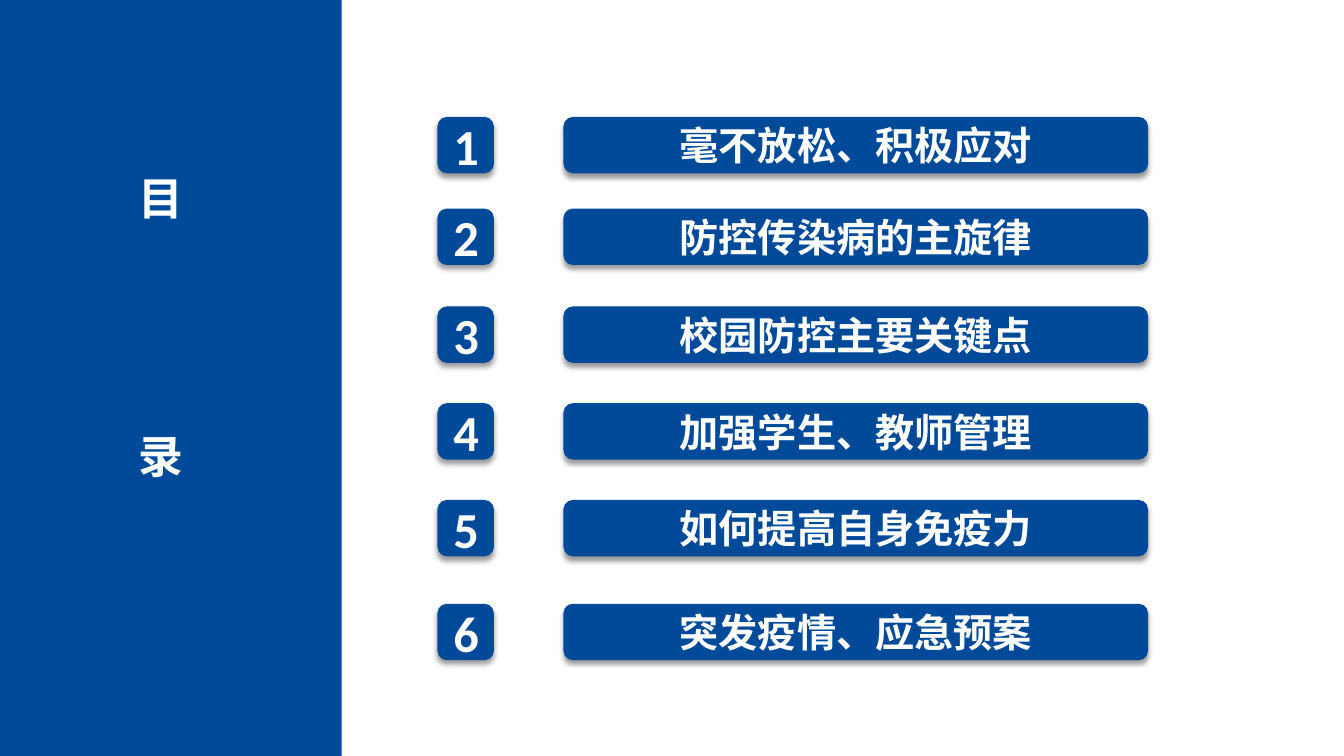
from dataclasses import dataclass

from lxml.etree import SubElement
from pptx import Presentation
from pptx.dml.color import RGBColor
from pptx.enum.shapes import MSO_SHAPE as Preset
from pptx.enum.text import MSO_ANCHOR as Anchor, MSO_AUTO_SIZE as AutoSize, PP_ALIGN as Align
from pptx.oxml.ns import qn
from pptx.util import Pt


@dataclass(frozen=True)
class Theme:
    blue: RGBColor = RGBColor(0x00, 0x4A, 0x99)
    white: RGBColor = RGBColor(0xFF, 0xFF, 0xFF)
    shadow: str = "000000"
    latin: str = "Calibri"
    chinese: str = "Noto Sans CJK SC"
    title_size: int = 32
    number_size: int = 36
    label_size: int = 28


THEME = Theme()

# Agenda entries with the top of each row, in points
AGENDA = [
    (83.5, "毫不放松、积极应对", THEME.latin),
    (149, "防控传染病的主旋律", THEME.chinese),
    (218.9, "校园防控主要关键点", THEME.chinese),
    (288, "加强学生、教师管理", THEME.chinese),
    (357.1, "如何提高自身免疫力", THEME.chinese),
    (431.3, "突发疫情、应急预案", THEME.chinese),
]
ROW_HEIGHT = 40.3
NUMBER_LEFT, NUMBER_WIDTH = 312.5, 40.3
LABEL_LEFT, LABEL_WIDTH = 402.5, 417.6


def add_span(para, text, size, font_name):
    """Add one bold white run."""
    span = para.add_run()
    span.text = text
    font = span.font
    font.name, font.size, font.bold = font_name, Pt(size), True
    font.color.rgb = THEME.white
    properties = span._r.get_or_add_rPr()
    SubElement(properties, qn("a:ea"), typeface=THEME.chinese)
    return span


def set_insets(frame, side, end):
    frame.margin_left = frame.margin_right = Pt(side)
    frame.margin_top = frame.margin_bottom = Pt(end)


def add_block(page, preset, left, top, width, height):
    """Add a plain blue shape without outline."""
    block = page.shapes.add_shape(preset, Pt(left), Pt(top), Pt(width), Pt(height))
    block.shadow.inherit = False
    block.fill.solid()
    block.fill.fore_color.rgb = THEME.blue
    block.line.fill.background()
    return block


def add_drop_shadow(block):
    effects = block._element.spPr.find(qn("a:effectLst"))
    shadow = SubElement(
        effects, qn("a:outerShdw"), blurRad=str(Pt(4)), dist=str(Pt(3)),
        dir="5400000", algn="ctr", rotWithShape="0",
    )
    color = SubElement(shadow, qn("a:srgbClr"), val=THEME.shadow)
    SubElement(color, qn("a:alpha"), val="40000")


def add_button(page, left, top, width, text, size, font_name, insets):
    """Add a rounded, shadowed button with centred text."""
    button = add_block(page, Preset.ROUNDED_RECTANGLE, left, top, width, ROW_HEIGHT)
    add_drop_shadow(button)
    frame = button.text_frame
    frame.word_wrap = True
    frame.vertical_anchor = Anchor.MIDDLE
    set_insets(frame, *insets)
    para = frame.paragraphs[0]
    para.alignment = Align.CENTER
    add_span(para, text, size, font_name)


def place_title(page, characters):
    """Set the title as a column of characters on top of the side panel."""
    title = page.shapes.title
    page.shapes._spTree.append(title._element)
    title.left, title.top, title.width, title.height = Pt(79.9), Pt(116.6), Pt(60.5), Pt(280.8)
    frame = title.text_frame
    frame.word_wrap = True
    frame.auto_size = AutoSize.NONE
    frame.vertical_anchor = Anchor.TOP
    set_insets(frame, 9.4, 5)
    for index, character in enumerate(characters):
        para = frame.add_paragraph() if index else frame.paragraphs[0]
        para.alignment = Align.RIGHT
        para.space_before = Pt(146 if index else 0)
        span = add_span(para, character, THEME.title_size, THEME.chinese)
        span._r.get_or_add_rPr().set("spc", "200")


def main():
    deck = Presentation()
    deck.slide_width, deck.slide_height = Pt(960), Pt(540)
    page = deck.slides.add_slide(deck.slide_layouts[5])

    # Side panel with the title
    add_block(page, Preset.RECTANGLE, 0, 0, 244, 540)
    place_title(page, "目录")

    # Numbered agenda rows
    for number, (top, label, font_name) in enumerate(AGENDA, start=1):
        add_button(page, NUMBER_LEFT, top, NUMBER_WIDTH, str(number),
                   THEME.number_size, THEME.latin, (9.4, 5))
        add_button(page, LABEL_LEFT, top, LABEL_WIDTH, label,
                   THEME.label_size, font_name, (13, 6.5))

    deck.save("out.pptx")


if __name__ == "__main__":
    main()
